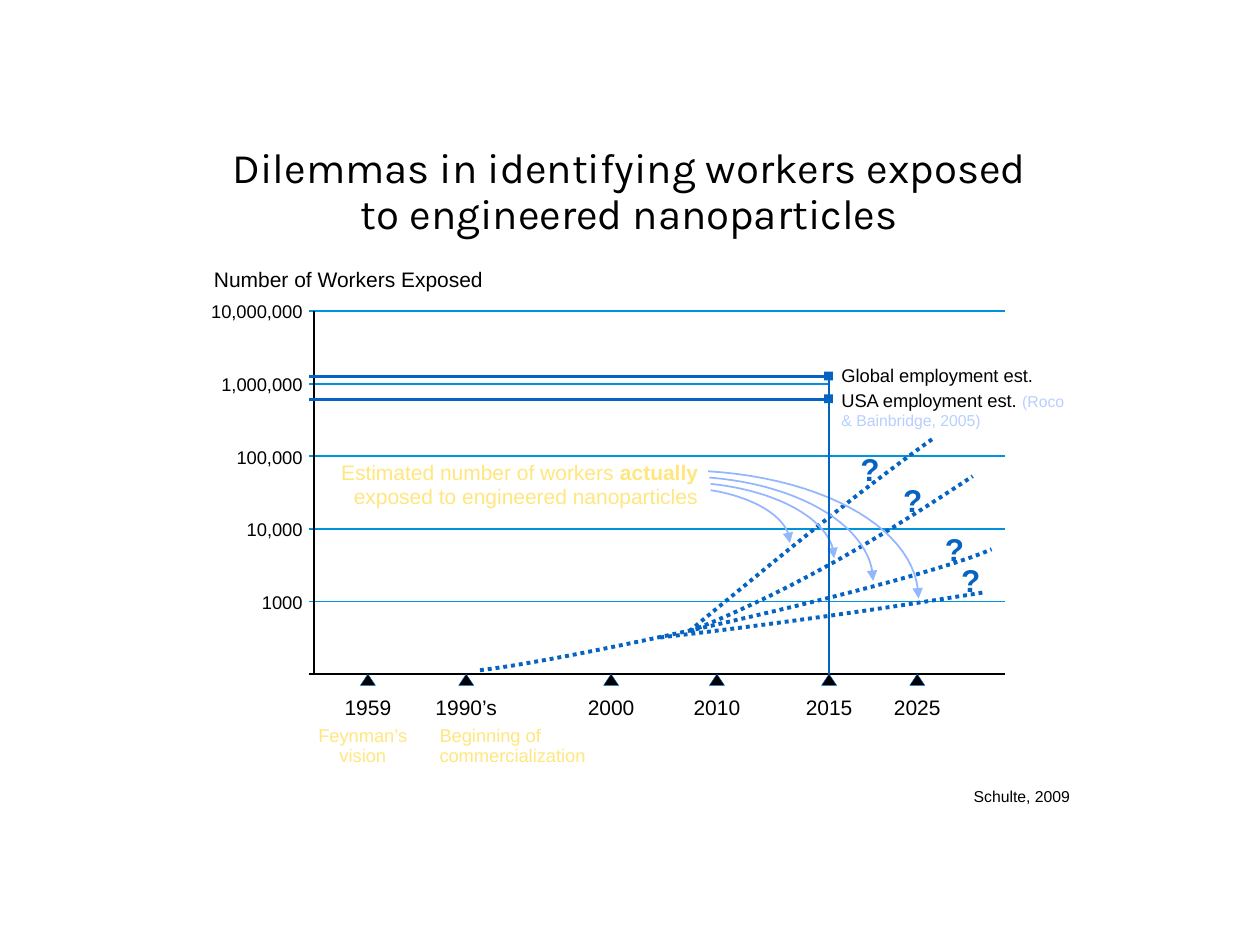
import pptx
import pptx.util
import pptx.dml.color
import pptx.enum.dml
import pptx.enum.shapes
import pptx.enum.text
import pptx.oxml.ns
import lxml.etree

Inches = pptx.util.Inches
Pt = pptx.util.Pt
RGBColor = pptx.dml.color.RGBColor
ALIGN = pptx.enum.text.PP_ALIGN
SHAPE = pptx.enum.shapes.MSO_SHAPE
qn = pptx.oxml.ns.qn

BLACK = RGBColor(0, 0, 0)
BLUE = RGBColor(0x05, 0x63, 0xC1)
GRID = RGBColor(0x00, 0x93, 0xDD)
ARROW = RGBColor(0x93, 0xB7, 0xFF)
PALE = RGBColor(0xB7, 0xCF, 0xFF)
YELLOW = RGBColor(0xFF, 0xE6, 0x7D)

LEFT, RIGHT, TOP, BASE = 2.45, 7.98, 2.47, 5.35
LEVELS = ["10,000,000", "1,000,000", "100,000", "10,000", "1000"]
STEP = (BASE - TOP) / len(LEVELS)
NOW = 6.58
YEARS = [("1959", 2.92), ("1990’s", 3.7), ("2000", 4.85),
         ("2010", 5.69), ("2015", NOW), ("2025", 7.28)]
TRENDS = [
    [(3.81, 5.32), (4.6, 5.23), (7.3, 4.62), (7.87, 4.36)],
    [(5.24, 5.06), (6.1, 4.96), (6.96, 4.84), (7.82, 4.7)],
    [(5.48, 5.01), (6.3, 4.68), (6.95, 4.29), (7.72, 3.78)],
    [(5.47, 5.01), (6.15, 4.45), (6.75, 3.95), (7.42, 3.47)],
]
ARCS = [
    [(5.62, 3.74), (6.58, 3.8), (7.29, 4.22), (7.29, 4.75)],
    [(5.63, 3.79), (6.38, 3.85), (6.93, 4.2), (6.93, 4.61)],
    [(5.64, 3.84), (6.21, 3.9), (6.62, 4.15), (6.62, 4.43)],
    [(5.64, 3.89), (6.01, 3.95), (6.27, 4.12), (6.27, 4.31)],
]
MARKS = [(6.73, 3.52), (7.07, 3.77), (7.4, 4.16), (7.53, 4.4)]
ESTS = [2.99, 3.17]


def style(run, size, color, bold=False, font="Arial"):
    run.font.name = font
    run.font.size = Pt(size)
    run.font.bold = bold
    run.font.color.rgb = color


def add_text(slide, box, text, size, color=BLACK, align=ALIGN.LEFT,
             space=0.95, bold=False, wrap=True):
    frame = slide.shapes.add_textbox(*map(Inches, box)).text_frame
    frame.word_wrap = wrap
    frame.text = text
    for para in frame.paragraphs:
        para.alignment = align
        para.line_spacing = space
        for run in para.runs:
            style(run, size, color, bold)
    return frame


def add_part(para, text, size, color, bold=False):
    run = para.add_run()
    run.text = text
    style(run, size, color, bold)


def add_line(slide, start, end, color, width=1):
    kind = pptx.enum.shapes.MSO_CONNECTOR.STRAIGHT
    line = slide.shapes.add_connector(kind, *map(Inches, start + end))
    line.line.color.rgb = color
    line.line.width = Pt(width)
    lxml.etree.SubElement(line._element.spPr, qn("a:effectLst"))


def add_shape(slide, kind, box, color):
    shape = slide.shapes.add_shape(kind, *map(Inches, box))
    shape.shadow.inherit = False
    shape.fill.solid()
    shape.fill.fore_color.rgb = color
    shape.line.color.rgb = BLUE
    shape.line.width = Pt(0.25)
    return shape


def bezier(ends, t):
    rates = ((1 - t) ** 3, 3 * t * (1 - t) ** 2, 3 * t * t * (1 - t), t ** 3)
    return tuple(Inches(sum(r * p[axis] for r, p in zip(rates, ends)))
                 for axis in (0, 1))


def add_curve(slide, ends, color, width, steps=24):
    points = [bezier(ends, i / steps) for i in range(steps + 1)]
    pen = slide.shapes.build_freeform(*points[0])
    pen.add_line_segments(points[1:], close=False)
    curve = pen.convert_to_shape()
    curve.shadow.inherit = False
    curve.fill.background()
    curve.line.color.rgb = color
    curve.line.width = Pt(width)
    return curve


def add_title(slide):
    title = slide.shapes.title
    title.left, title.top, title.width, title.height = map(
        Inches, (1.62, 1.06, 6.75, 0.94))
    frame = title.text_frame
    frame.text = "Dilemmas in identifying workers exposed to engineered nanoparticles"
    frame.word_wrap = True
    frame.auto_size = pptx.enum.text.MSO_AUTO_SIZE.NONE
    frame.vertical_anchor = pptx.enum.text.MSO_ANCHOR.MIDDLE
    para = frame.paragraphs[0]
    para.alignment = ALIGN.CENTER
    para.line_spacing = 0.9
    style(para.runs[0], 24, BLACK, font="Karla")


def add_axes(slide):
    for i, level in enumerate(LEVELS):
        y = TOP + i * STEP
        end = NOW if level == "1,000,000" else RIGHT
        add_line(slide, (LEFT, y), (end, y), GRID)
        add_text(slide, (1.4, y - 0.12, 1.1, 0.27), level, 10.5,
                 align=ALIGN.RIGHT)
    add_line(slide, (LEFT, BASE), (RIGHT, BASE), BLACK)
    add_line(slide, (2.49, BASE), (2.49, TOP), BLACK)
    for year, x in YEARS:
        add_shape(slide, SHAPE.ISOSCELES_TRIANGLE,
                  (x - 0.06, BASE, 0.12, 0.09), BLACK)
        add_text(slide, (x - 0.36, 5.48, 0.72, 0.29), year, 12,
                 align=ALIGN.CENTER)


def add_trends(slide):
    for ends in TRENDS:
        curve = add_curve(slide, ends, BLUE, 2.25)
        curve.line.dash_style = pptx.enum.dml.MSO_LINE.ROUND_DOT
    for x, y in MARKS:
        add_text(slide, (x, y, 0.36, 0.4), "?", 18, BLUE, space=1,
                 bold=True, wrap=False)
    for ends in ARCS:
        curve = add_curve(slide, ends, ARROW, 1)
        lxml.etree.SubElement(curve.line._get_or_add_ln(), qn("a:tailEnd"),
                              type="triangle")


def add_ests(slide):
    add_line(slide, (NOW, BASE), (NOW, ESTS[0]), BLUE, 1.5)
    for y in ESTS:
        add_line(slide, (NOW, y), (LEFT, y), BLUE, 1.5)
        dot = add_shape(slide, SHAPE.RECTANGLE,
                        (NOW - 0.04, y - 0.04, 0.07, 0.07), BLUE)
        dot.line.fill.background()
    frame = add_text(slide, (NOW, 2.85, 2, 0.62),
                     "Global employment est.\nUSA employment est. ", 10.5)
    para = frame.paragraphs[1]
    para.space_before = Pt(2.6)
    add_part(para, "(Roco & Bainbridge, 2005)", 9, PALE)


def add_notes(slide):
    frame = add_text(slide, (2.58, 3.61, 3.06, 0.48),
                     "Estimated number of workers ", 12, YELLOW, ALIGN.RIGHT)
    para = frame.paragraphs[0]
    add_part(para, "actually", 12, YELLOW, True)
    add_part(para, " exposed to engineered nanoparticles", 12, YELLOW)
    add_text(slide, (1.6, 2.09, 2.66, 0.28), "Number of Workers Exposed", 12,
             space=0.9)
    add_text(slide, (2.41, 5.72, 0.94, 0.42), "Feynman’s vision", 10.5,
             YELLOW, ALIGN.CENTER, 0.9)
    add_text(slide, (3.39, 5.72, 1.54, 0.42), "Beginning of commercialization",
             10.5, YELLOW, space=0.9)
    add_text(slide, (7.54, 6.21, 1.05, 0.24), "Schulte, 2009", 9,
             align=ALIGN.RIGHT, space=0.9)


def main():
    deck = pptx.Presentation()
    deck.slide_width, deck.slide_height = Inches(10), Inches(7.5)
    slide = deck.slides.add_slide(deck.slide_layouts[5])
    add_title(slide)
    add_axes(slide)
    add_trends(slide)
    add_notes(slide)
    add_ests(slide)
    deck.save("out.pptx")


if __name__ == "__main__":
    main()
